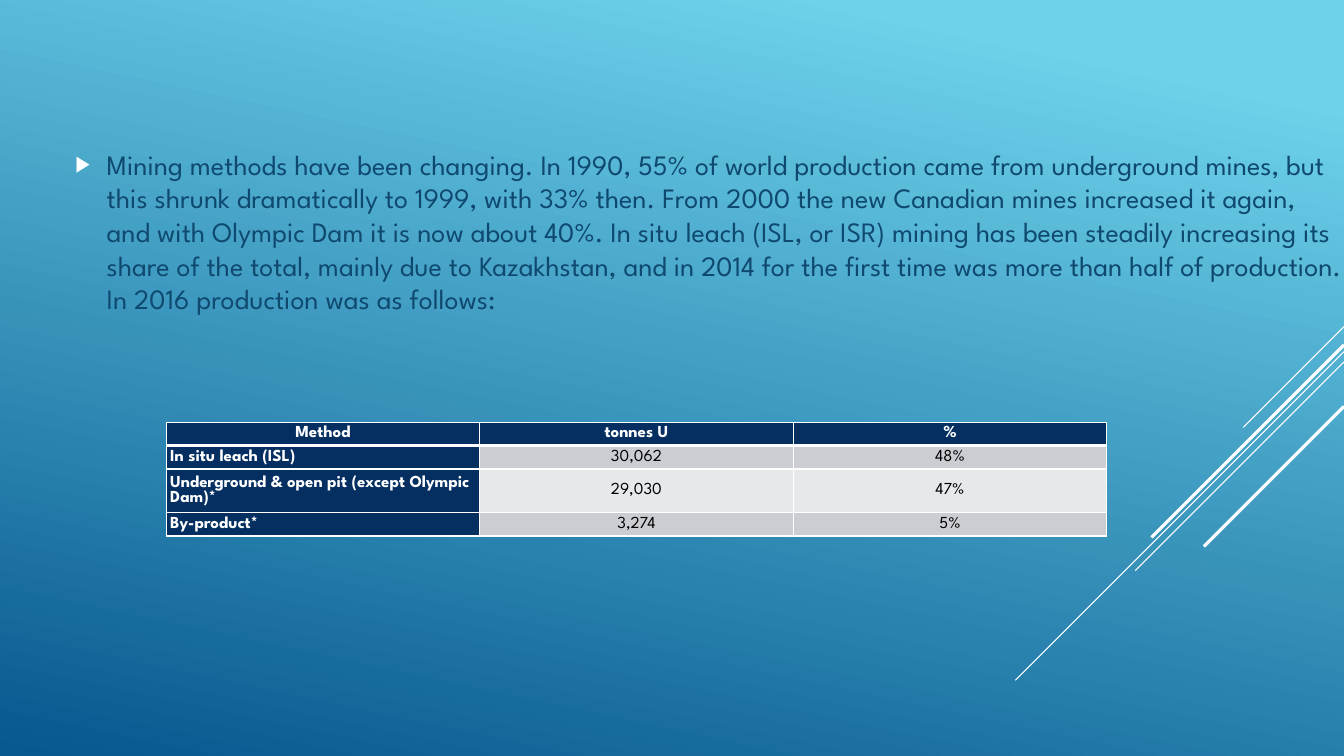
from dataclasses import dataclass

from lxml import etree
from pptx import Presentation
from pptx import util as u
from pptx.dml.color import RGBColor
from pptx.enum import shapes, text
from pptx.oxml.ns import qn


@dataclass(frozen=True)
class Theme:
    font: str = "League Spartan"
    body: int = 20
    cell: int = 12
    sky: str = "6ED2EB"
    deep: str = "06588E"
    ink: str = "0F496F"
    navy: str = "052F61"
    white: str = "FFFFFF"
    black: str = "000000"
    bands: tuple = ("CCCDD2", "E7E8EA")


T = Theme()
WIDE, HIGH = 33.87, 19.05

INTRO = (
    "Mining methods have been changing. In 1990, 55% of world production came "
    "from underground mines, but this shrunk dramatically to 1999, with 33% then. "
    "From 2000 the new Canadian mines increased it again, and with Olympic Dam it "
    "is now about 40%. In situ leach (ISL, or ISR) mining has been steadily "
    "increasing its share of the total, mainly due to Kazakhstan, and in 2014 for "
    "the first time was more than half of production. In 2016 production was as follows:"
)
ROWS = [
    ("Method", "tonnes U", "%"),
    ("In situ leach (ISL)", "30,062", "48%"),
    ("Underground & open pit (except Olympic Dam)*", "29,030", "47%"),
    ("By-product*", "3,274", "5%"),
]
# Diagonal strokes: start height on the right edge, run, weight
STROKES = [
    (8.23, 2.54, 0.75),
    (8.86, 8.28, 0.75),
    (9.12, 5.26, 0.75),
    (8.69, 4.85, 2.25),
    (10.24, 3.53, 2.25),
]


def rgb(code):
    return RGBColor.from_string(code)


def add_xml(parent, tag, **attrs):
    return etree.SubElement(parent, qn(tag), attrs)


def add_run(para, words, size, color, bold=False):
    run = para.add_run()
    run.text = words
    font = run.font
    font.name, font.size, font.bold = T.font, u.Pt(size), bold
    font.color.rgb = rgb(color)


def paint_back(slide):
    fill = slide.background.fill
    fill.gradient()
    fill.gradient_angle = 258
    for stop, color, place in zip(fill.gradient_stops, (T.sky, T.deep), (0.1, 1)):
        stop.color.rgb = rgb(color)
        stop.position = place


def add_stroke(slide, top, run, weight):
    """Draw a 45 degree line down and left from the right edge."""
    line = slide.shapes.add_connector(
        shapes.MSO_CONNECTOR.STRAIGHT,
        u.Cm(WIDE), u.Cm(top), u.Cm(WIDE - run), u.Cm(top + run))
    line.line.color.rgb = rgb(T.white)
    line.line.width = u.Pt(weight)
    add_xml(line._element.spPr, "a:effectLst")


def add_bullet(para, mark, color, indent):
    props = para._p.get_or_add_pPr()
    props.set("marL", str(u.Cm(indent)))
    props.set("indent", str(-u.Cm(indent)))
    tint = add_xml(props, "a:buClr")
    add_xml(tint, "a:srgbClr", val=color)
    add_xml(props, "a:buSzPct", val="80000")
    add_xml(props, "a:buFont", typeface="Arial")
    add_xml(props, "a:buChar", char=mark)


def add_intro(slide):
    box = slide.shapes.add_textbox(u.Cm(1.65), u.Cm(3.33), u.Cm(32.51), u.Cm(5.94))
    frame = box.text_frame
    frame.word_wrap = True
    frame.vertical_anchor = text.MSO_ANCHOR.MIDDLE
    frame.margin_bottom = u.Cm(1.07)
    para = frame.paragraphs[0]
    add_bullet(para, "▶", T.white, 0.79)
    para.line_spacing = u.Pt(24)
    add_run(para, INTRO, T.body, T.ink)


def add_edges(cell, top, bottom):
    props = cell._tc.get_or_add_tcPr()
    for side, weight in (("L", 1), ("R", 1), ("T", top), ("B", bottom)):
        edge = add_xml(props, "a:ln" + side, w=str(u.Pt(weight)))
        fill = add_xml(edge, "a:solidFill")
        add_xml(fill, "a:srgbClr", val=T.white)


def fill_cell(cell, words, row, col):
    head = row == 0 or col == 0
    add_edges(cell, 3 if row == 1 else 1, 3 if row == 0 else 1)
    cell.fill.solid()
    cell.fill.fore_color.rgb = rgb(T.navy if head else T.bands[(row - 1) % 2])
    cell.margin_left = cell.margin_right = u.Cm(0.1)
    cell.margin_top = cell.margin_bottom = u.Cm(0.04)
    cell.vertical_anchor = text.MSO_ANCHOR.MIDDLE
    para = cell.text_frame.paragraphs[0]
    left = col == 0 and row > 0
    para.alignment = text.PP_ALIGN.LEFT if left else text.PP_ALIGN.CENTER
    add_run(para, words, T.cell, T.white if head else T.black, head)


def add_grid(slide):
    frame = slide.shapes.add_table(
        len(ROWS), len(ROWS[0]), u.Cm(4.19), u.Cm(10.64), u.Cm(23.7), u.Cm(1.88))
    table = frame.table
    table.horz_banding = False
    for row, words in enumerate(ROWS):
        table.rows[row].height = u.Cm(0.47)
        for col, word in enumerate(words):
            fill_cell(table.cell(row, col), word, row, col)


def main():
    deck = Presentation()
    deck.slide_width, deck.slide_height = u.Cm(WIDE), u.Cm(HIGH)
    slide = deck.slides.add_slide(deck.slide_layouts[6])

    # Backdrop
    paint_back(slide)
    for stroke in STROKES:
        add_stroke(slide, *stroke)

    # Content
    add_intro(slide)
    add_grid(slide)
    deck.save("out.pptx")


if __name__ == "__main__":
    main()
